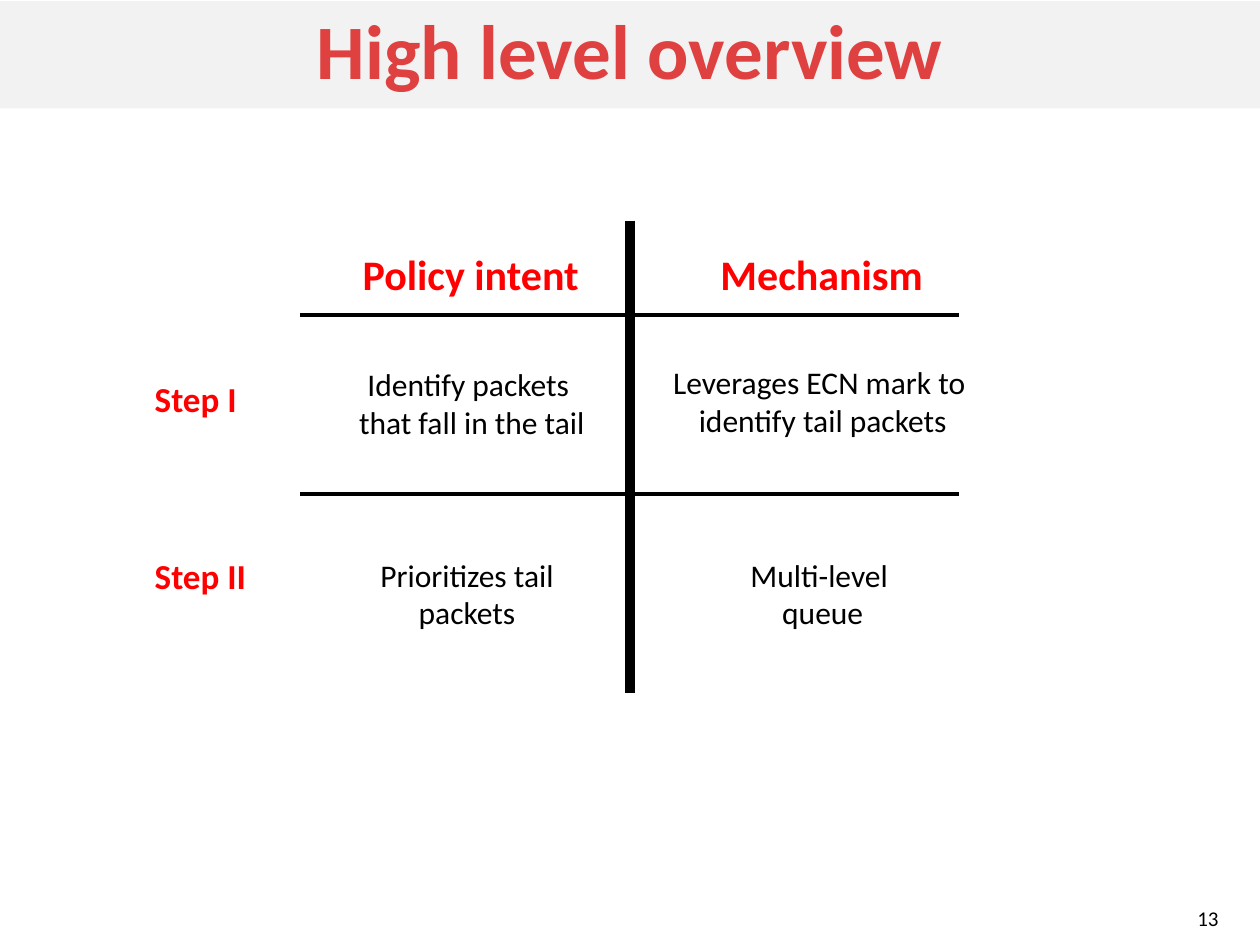
from pptx import Presentation
from pptx.dml.color import RGBColor
from pptx.enum.shapes import MSO_CONNECTOR, MSO_SHAPE
from pptx.enum.text import MSO_ANCHOR, MSO_AUTO_SIZE, PP_ALIGN
from pptx.oxml.ns import qn
from pptx.util import Inches, Pt
from lxml import etree

STRAIGHT = MSO_CONNECTOR.STRAIGHT
RECTANGLE = MSO_SHAPE.RECTANGLE
MIDDLE, TOP = MSO_ANCHOR.MIDDLE, MSO_ANCHOR.TOP
FIT_SHAPE = MSO_AUTO_SIZE.SHAPE_TO_FIT_TEXT
LEFT, CENTER, RIGHT = PP_ALIGN.LEFT, PP_ALIGN.CENTER, PP_ALIGN.RIGHT

BLACK = RGBColor(0x00, 0x00, 0x00)
RED = RGBColor(0xFF, 0x00, 0x00)
TITLE_RED = RGBColor(0xDF, 0x41, 0x41)
BAND_GRAY = RGBColor(0xF2, 0xF2, 0xF2)

TITLE = {"name": "Calibri", "size": Pt(44), "bold": True}
HEADING = {"name": "Calibri", "size": Pt(24), "bold": True}
STEP = {"name": "Calibri", "size": Pt(20), "bold": True}
BODY = {"name": "Calibri", "size": Pt(18), "bold": False}
NUMBER = {"name": "Calibri", "size": Pt(12), "bold": False}

HEADING_TOP = 1.92
LABEL_LEFT = 1.13
RULE_LEFT, RULE_RIGHT = 2.38, 7.61

HEADINGS = [("Policy intent", 2.78, 1.93), ("Mechanism", 5.62, 1.83)]
STEPS = [("Step I", 2.95, 0.86), ("Step II", 4.35, 0.93)]
CELLS = [
    ((2.74, 2.85, 2.01), [("Identify packets ", CENTER), ("that fall in the tail", CENTER)]),
    ((5.23, 2.83, 2.6), [("Leverages ECN mark to ", CENTER), ("identify tail packets", CENTER)]),
    ((2.92, 4.36, 1.65), [("Prioritizes tail", LEFT), ("packets", CENTER)]),
    ((5.85, 4.36, 1.36), [("Multi-level ", CENTER), ("queue", CENTER)]),
]
RULES = [
    ((5, 1.75), (5, 5.5), 6),
    ((RULE_LEFT, 2.5), (RULE_RIGHT, 2.5), 2.25),
    ((RULE_LEFT, 3.92), (RULE_RIGHT, 3.92), 2.25),
]


def write_lines(frame, lines, style, color):
    """Fill a text frame with one paragraph for each (text, alignment) pair."""
    for index, (text, alignment) in enumerate(lines):
        para = frame.paragraphs[0] if index == 0 else frame.add_paragraph()
        para.alignment = alignment
        span = para.add_run()
        span.text = text
        for key, value in style.items():
            setattr(span.font, key, value)
        span.font.color.rgb = color


def add_title(page, text):
    """Add the shaded title band across the top."""
    band = page.shapes.add_shape(RECTANGLE, 0, Inches(0.01), Inches(10), Inches(0.85))
    band.shadow.inherit = False
    band.fill.solid()
    band.fill.fore_color.rgb = BAND_GRAY
    band.line.fill.background()
    frame = band.text_frame
    frame.vertical_anchor = MIDDLE
    write_lines(frame, [(text, CENTER)], TITLE, TITLE_RED)
    frame.paragraphs[0].line_spacing = 0.9


def add_label(page, bounds, lines, style, color):
    """Add an unwrapped text box that fits its text."""
    box = page.shapes.add_textbox(*map(Inches, bounds))
    frame = box.text_frame
    settings = {"word_wrap": False, "auto_size": FIT_SHAPE, "vertical_anchor": TOP}
    for key, value in settings.items():
        setattr(frame, key, value)
    write_lines(frame, lines, style, color)


def add_page_number(page, number):
    """Add the right-aligned page number at the bottom."""
    box = page.shapes.add_textbox(*map(Inches, (8.97, 7.14, 0.8, 0.3)))
    frame = box.text_frame
    frame.word_wrap = True
    frame.vertical_anchor = MIDDLE
    write_lines(frame, [(number, RIGHT)], NUMBER, BLACK)


def add_rule(page, start, end, weight):
    """Add a black straight line without a shadow."""
    rule = page.shapes.add_connector(STRAIGHT, *map(Inches, start + end))
    rule.line.color.rgb = BLACK
    rule.line.width = Pt(weight)
    etree.SubElement(rule._element.spPr, qn("a:effectLst"))


def main():
    """Build the overview slide and save it."""
    deck = Presentation()
    deck.slide_width, deck.slide_height = Inches(10), Inches(7.5)
    page = deck.slides.add_slide(deck.slide_layouts[6])
    add_title(page, "High level overview")
    add_page_number(page, "13")
    for text, left, width in HEADINGS:
        add_label(page, (left, HEADING_TOP, width, 0.5), [(text, LEFT)], HEADING, RED)
    for start, end, weight in RULES:
        add_rule(page, start, end, weight)
    for text, top, width in STEPS:
        add_label(page, (LABEL_LEFT, top, width, 0.44), [(text, LEFT)], STEP, RED)
    for bounds, lines in CELLS:
        add_label(page, bounds + (0.71,), lines, BODY, BLACK)
    deck.save("out.pptx")


if __name__ == "__main__":
    main()
